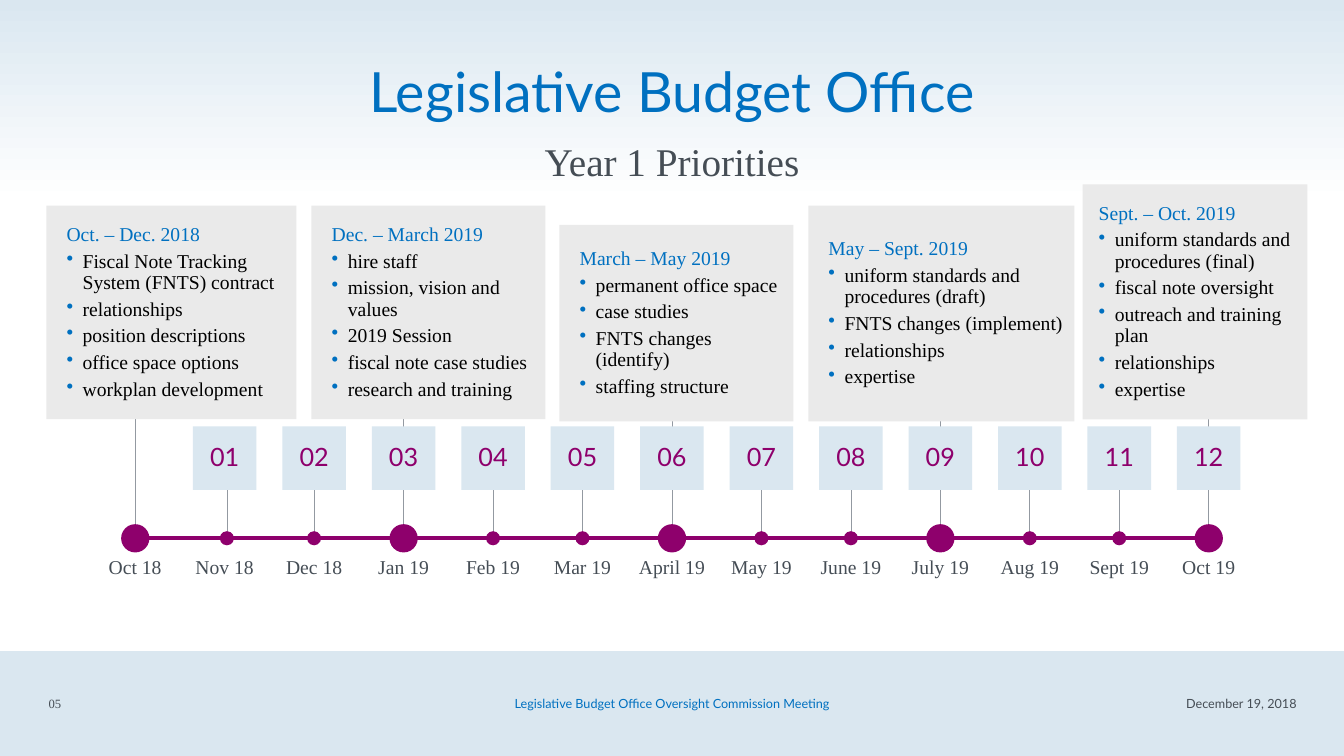
import lxml.etree
import pptx
import pptx.dml.color
import pptx.enum.shapes
import pptx.enum.text
import pptx.oxml.ns
import pptx.util

Pt = pptx.util.Pt
RGBColor = pptx.dml.color.RGBColor
SHAPES = pptx.enum.shapes.MSO_SHAPE
ALIGN = pptx.enum.text.PP_ALIGN
qn = pptx.oxml.ns.qn

BLUE = RGBColor(0x00, 0x70, 0xC0)
PALE_BLUE = RGBColor(0xDA, 0xE7, 0xF0)
PURPLE = RGBColor(0x8E, 0x00, 0x6C)
SLATE = RGBColor(0x45, 0x4D, 0x55)
STEM_GRAY = RGBColor(0x93, 0x99, 0xA1)
CARD_GRAY = RGBColor(0xEA, 0xEA, 0xEA)
WHITE = RGBColor(0xFF, 0xFF, 0xFF)
BLACK = RGBColor(0x00, 0x00, 0x00)
SANS = "Lato"
SERIF = "Times New Roman"

WIDTH, HEIGHT = 960, 540
FIRST_X, MONTH_STEP = 96.6, 63.9
AXIS_Y = 384.5
NUMBER_TOP, NUMBER_SIZE = 304.5, 45.4
MONTHS = ["Oct 18", "Nov 18", "Dec 18", "Jan 19", "Feb 19", "Mar 19", "April 19",
          "May 19", "June 19", "July 19", "Aug 19", "Sept 19", "Oct 19"]
DOT_SHIFT = {"Nov 18": 1.6}

# left, top, width, height, left inset, heading, bullet items
CARDS = [
    (33.1, 146.9, 178.6, 152.6, 14.4, "Oct. – Dec. 2018",
     ["Fiscal Note Tracking System (FNTS) contract", "relationships",
      "position descriptions", "office space options", "workplan development"]),
    (222.5, 146.9, 167.1, 152.6, 14.4, "Dec. – March 2019",
     ["hire staff", "mission, vision and values", "2019 Session",
      "fiscal note case studies", "research and training"]),
    (399.6, 160.6, 167.1, 140.4, 14.4, "March – May 2019",
     ["permanent office space", "case studies", "FNTS changes (identify)",
      "staffing structure"]),
    (577.4, 146.9, 190.1, 154.1, 14.4, "May – Sept. 2019",
     ["uniform standards and procedures (draft)", "FNTS changes (implement)",
      "relationships", "expertise"]),
    (773.3, 131.8, 160.6, 167.8, 11.5, "Sept. – Oct. 2019",
     ["uniform standards and procedures (final)", "fiscal note oversight",
      "outreach and training plan", "relationships", "expertise"]),
]


class TimelineSlide:
    def __init__(self, presentation):
        self.slide = presentation.slides.add_slide(presentation.slide_layouts[6])

    def shape(self, left, top, width, height, color, kind=SHAPES.RECTANGLE):
        shape = self.slide.shapes.add_shape(kind, Pt(left), Pt(top), Pt(width), Pt(height))
        shape.shadow.inherit = False
        shape.fill.solid()
        shape.fill.fore_color.rgb = color
        shape.line.fill.background()
        return shape

    def fading_band(self, height):
        band = self.shape(0, 0, WIDTH, height, PALE_BLUE)
        band.fill.gradient()
        band.fill.gradient_angle = 270
        for stop, color in zip(band.fill.gradient_stops, (PALE_BLUE, WHITE)):
            stop.color.rgb = color

    def line(self, start_x, start_y, end_x, end_y, color, weight):
        line = self.slide.shapes.add_connector(
            pptx.enum.shapes.MSO_CONNECTOR.STRAIGHT,
            Pt(start_x), Pt(start_y), Pt(end_x), Pt(end_y))
        line.line.color.rgb = color
        line.line.width = Pt(weight)
        lxml.etree.SubElement(line._element.spPr, qn("a:effectLst"))
        return line

    def dot(self, center_x, diameter):
        self.shape(center_x - diameter / 2, AXIS_Y - diameter / 2, diameter, diameter,
                   PURPLE, SHAPES.OVAL)

    def frame(self, shape, insets=(7.2, 3.6, 7.2, 3.6)):
        """Wrap and centre the text vertically; insets run left, top, right, bottom."""
        frame = shape.text_frame
        frame.word_wrap = True
        frame.vertical_anchor = pptx.enum.text.MSO_ANCHOR.MIDDLE
        (frame.margin_left, frame.margin_top,
         frame.margin_right, frame.margin_bottom) = map(Pt, insets)
        return frame

    def set_text(self, paragraph, text, size, font, color, align=ALIGN.CENTER,
                 spacing=0.9, before=10):
        paragraph.text = text
        paragraph.alignment = align
        paragraph.line_spacing = spacing
        paragraph.space_before = Pt(before)
        paragraph.font.size = Pt(size)
        paragraph.font.name = font
        paragraph.font.color.rgb = color

    def bullet(self, paragraph):
        properties = paragraph._p.get_or_add_pPr()
        properties.set("marL", str(Pt(11.5)))
        properties.set("indent", str(Pt(-11.5)))
        bullet_color = lxml.etree.SubElement(properties, qn("a:buClr"))
        lxml.etree.SubElement(bullet_color, qn("a:srgbClr"), val=str(BLUE))
        lxml.etree.SubElement(properties, qn("a:buChar"), char="•")

    def label(self, left, top, width, height, text, size, font, color,
              insets=(7.2, 3.6, 7.2, 3.6), **style):
        box = self.slide.shapes.add_textbox(Pt(left), Pt(top), Pt(width), Pt(height))
        self.set_text(self.frame(box, insets).paragraphs[0], text, size, font, color, **style)

    def number(self, center_x, text):
        box = self.shape(center_x - NUMBER_SIZE / 2, NUMBER_TOP, NUMBER_SIZE, NUMBER_SIZE,
                         PALE_BLUE)
        self.set_text(self.frame(box).paragraphs[0], text, 18, SANS, PURPLE)
        return box

    def card(self, left, top, width, height, inset, heading, items):
        card = self.shape(left, top, width, height, CARD_GRAY)
        frame = self.frame(card, (inset, 3.6, 7.2, 3.6))
        self.set_text(frame.paragraphs[0], heading, 14, SERIF, BLUE, ALIGN.LEFT, before=4)
        for item in items:
            paragraph = frame.add_paragraph()
            self.bullet(paragraph)
            self.set_text(paragraph, item, 14, SERIF, BLACK, ALIGN.LEFT, before=4)

    def timeline(self):
        centers = [FIRST_X + MONTH_STEP * index for index in range(len(MONTHS))]
        self.line(centers[0], AXIS_Y, centers[-1], AXIS_Y, PURPLE, 2.84)
        stems = []
        for index, (month, center) in enumerate(zip(MONTHS, centers)):
            quarter = index % 3 == 0
            dot_x = center + DOT_SHIFT.get(month, 0)
            stem_top = 282.2 if quarter else NUMBER_TOP + NUMBER_SIZE
            stems.append(self.line(dot_x, AXIS_Y, dot_x, stem_top, STEM_GRAY, 0.5))
            self.dot(dot_x, 20.2 if quarter else 10.1)
            self.label(center - 26.3, 395.3, 52.6, 20.9, month, 14, SERIF, SLATE,
                       insets=(0, 0, 0, 0))
        for card in CARDS:
            self.card(*card)
        for index in range(1, len(MONTHS)):
            box = self.number(centers[index], f"{index:02}")
            if index % 3 and MONTHS[index] not in DOT_SHIFT:
                stems[index].end_connect(box, 2)


def main():
    presentation = pptx.Presentation()
    presentation.slide_width = Pt(WIDTH)
    presentation.slide_height = Pt(HEIGHT)
    page = TimelineSlide(presentation)
    page.shape(0, 465.1, WIDTH, 74.9, PALE_BLUE)
    page.fading_band(144)
    page.label(120, 40.3, 720, 54, "Legislative Budget Office", 39.6, SANS, BLUE)
    page.label(120, 97.9, 720, 38.9, "Year 1 Priorities", 28, SERIF, SLATE)
    page.timeline()
    footers = [
        (318, 324, "Legislative Budget Office Oversight Commission Meeting",
         SANS, BLUE, ALIGN.CENTER),
        (717.1, 216, "December 19, 2018", SANS, SLATE, ALIGN.RIGHT),
        (22.3, 33.8, "05", SERIF, SLATE, ALIGN.CENTER),
    ]
    for left, width, text, font, color, align in footers:
        page.label(left, 488.2, width, 28.8, text, 9, font, color,
                   align=align, spacing=1.0, before=0)
    presentation.save("out.pptx")


if __name__ == "__main__":
    main()
